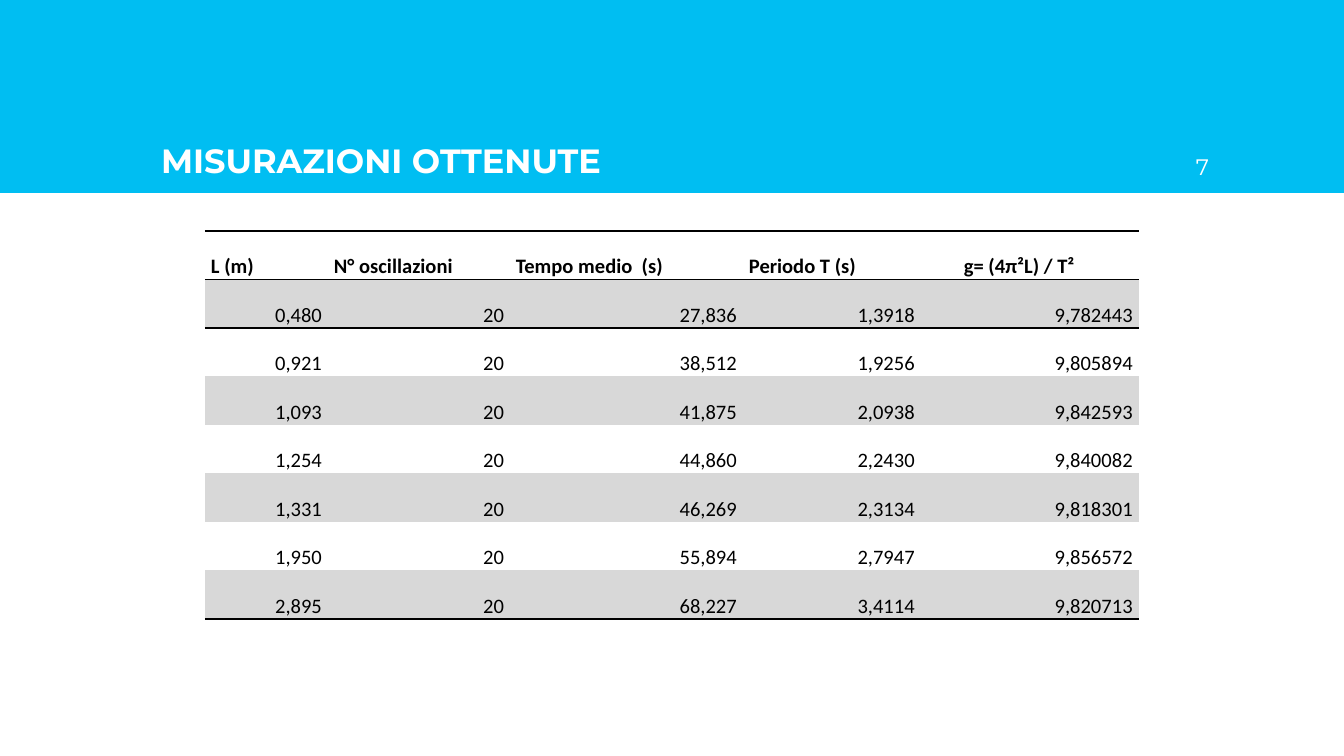
import pptx
import pptx.util
from pptx.dml.color import RGBColor
from pptx.enum.shapes import MSO_SHAPE
from pptx.enum.text import MSO_ANCHOR, PP_ALIGN
from pptx.oxml import parse_xml
from pptx.oxml.ns import nsdecls

SCALE = 914400 / 134.4
BLUE = RGBColor(0x00, 0xBE, 0xF2)
WHITE = RGBColor(0xFF, 0xFF, 0xFF)
BLACK = RGBColor(0x00, 0x00, 0x00)
GREY = RGBColor(0xD8, 0xD8, 0xD8)
NO_GRID = "{2D5ABB26-0587-4C30-8999-92F81FD0307C}"

WIDTHS = [123, 182, 233, 178, 218]
HEADS = ["L (m)", "N° oscillazioni", "Tempo medio  (s)", "Periodo T (s)",
         "g= (4π²L) / T²"]
DATA = [
    ["0,480", "20", "27,836", "1,3918", "9,782443"],
    ["0,921", "20", "38,512", "1,9256", "9,805894"],
    ["1,093", "20", "41,875", "2,0938", "9,842593"],
    ["1,254", "20", "44,860", "2,2430", "9,840082"],
    ["1,331", "20", "46,269", "2,3134", "9,818301"],
    ["1,950", "20", "55,894", "2,7947", "9,856572"],
    ["2,895", "20", "68,227", "3,4114", "9,820713"],
]


def px(count):
    return pptx.util.Emu(round(count * SCALE))


def write(frame, text, font="Montserrat", size=18, color=WHITE, bold=False,
          align=PP_ALIGN.LEFT, space=1.0):
    para = frame.paragraphs[0]
    para.alignment = align
    para.line_spacing = space
    run = para.add_run()
    run.text = text
    run.font.name = font
    run.font.size = pptx.util.Pt(size)
    run.font.color.rgb = color
    run.font.bold = bold


def add_band(slide):
    band = slide.shapes.add_shape(MSO_SHAPE.RECTANGLE, 0, 0, px(1344), px(193))
    band.shadow.inherit = False
    band.fill.solid()
    band.fill.fore_color.rgb = BLUE
    band.line.fill.background()
    # The band lies behind the title placeholder.
    slide.shapes._spTree.insert(2, band._element)


def set_box(shape, left, top, width, height):
    """Place a text shape and anchor its text at the bottom."""
    shape.left, shape.top = px(left), px(top)
    shape.width, shape.height = px(width), px(height)
    frame = shape.text_frame
    frame.word_wrap = True
    frame.vertical_anchor = MSO_ANCHOR.BOTTOM
    frame.margin_left = frame.margin_right = px(13)
    frame.margin_top = frame.margin_bottom = px(13)
    return frame


def add_rule(cell, side):
    """Draw a black line on side T or B of a cell."""
    rule = parse_xml(
        f'<a:ln{side} {nsdecls("a")} w="12700"><a:solidFill>'
        f'<a:srgbClr val="{BLACK}"/></a:solidFill></a:ln{side}>')
    props = cell._tc.get_or_add_tcPr()
    spot = sum(child.tag.endswith("}lnT") for child in props)
    props.insert(spot, rule)


def fill_cell(cell, text, head, shade, **style):
    cell.vertical_anchor = MSO_ANCHOR.BOTTOM
    cell.margin_left = cell.margin_right = px(6)
    cell.margin_top = cell.margin_bottom = 0
    if shade:
        cell.fill.solid()
        cell.fill.fore_color.rgb = GREY
    else:
        cell.fill.background()
    write(cell.text_frame, text, font="Calibri", size=11, color=BLACK,
          bold=head, space=1.15,
          align=PP_ALIGN.LEFT if head else PP_ALIGN.RIGHT)


def add_grid(slide):
    rows = [HEADS] + DATA
    frame = slide.shapes.add_table(len(rows), len(HEADS), px(205), px(231),
                                   px(sum(WIDTHS)), px(388))
    table = frame.table
    table.first_row = table.horz_banding = False
    table._tbl.tblPr.find("{*}tableStyleId").text = NO_GRID
    for col, width in zip(table.columns, WIDTHS):
        col.width = px(width)
    last = len(rows) - 1
    for r, row in enumerate(rows):
        for c, text in enumerate(row):
            cell = table.cell(r, c)
            fill_cell(cell, text, head=r == 0, shade=r % 2 == 1)
            if r in (0, 1):
                add_rule(cell, "T")
            if r in (0, last):
                add_rule(cell, "B")
    table.cell(0, len(HEADS) - 1).margin_left = px(43)


def main():
    deck = pptx.Presentation()
    deck.slide_width, deck.slide_height = px(1344), px(756)
    slide = deck.slides.add_slide(deck.slide_layouts[5])
    add_band(slide)
    title = set_box(slide.shapes.title, 148, 95, 1048, 98)
    write(title, "MISURAZIONI OTTENUTE", bold=True)
    number = slide.shapes.add_textbox(0, 0, 0, 0)
    write(set_box(number, 1141, 95, 81, 98), "7", size=12,
          align=PP_ALIGN.RIGHT)
    add_grid(slide)
    deck.save("out.pptx")


if __name__ == "__main__":
    main()
